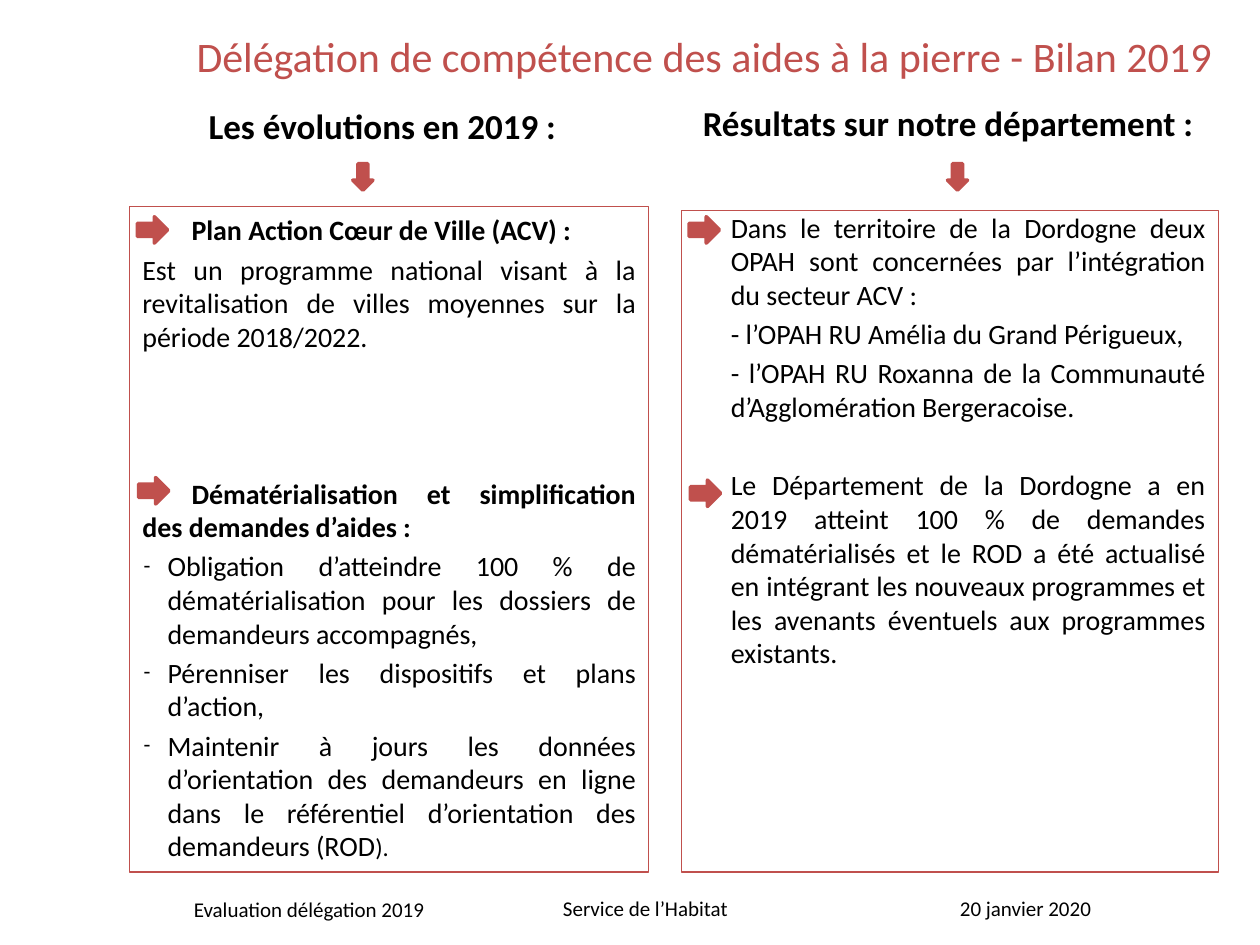
"""Build the 2019 review slide on the delegated housing-aid programme."""
from dataclasses import dataclass

from lxml import etree
from pptx import Presentation
from pptx import util as u
from pptx.dml.color import RGBColor
from pptx.enum import shapes, text
from pptx.oxml.ns import qn


@dataclass(frozen=True)
class Theme:
    face: str = "Calibri"
    red: RGBColor = RGBColor(0xC0, 0x50, 0x4D)
    ink: RGBColor = RGBColor(0, 0, 0)
    title: int = 24
    head: int = 20
    body: int = 16
    tail: int = 14
    foot: int = 12
    gap: float = 3.2


LOOK = Theme()
WIDE, HIGH = u.Inches(10), u.Inches(7.5)
ALIGN, ANCHOR = text.PP_ALIGN, text.MSO_ANCHOR

TITLE = "Délégation de compétence des aides à la pierre - Bilan 2019"
HEADS = ["Les évolutions en 2019 :", "Résultats sur notre département :"]

LEFT = [
    ("lead", "Plan Action Cœur de Ville (ACV) :", LOOK.gap),
    ("plain", "Est un programme national visant à la revitalisation de villes "
              "moyennes sur la période 2018/2022.", LOOK.gap),
    ("lead", "Dématérialisation et simplification des demandes d’aides :", 70.4),
    ("dash", "Obligation d’atteindre 100 % de dématérialisation pour les "
             "dossiers de demandeurs accompagnés,", LOOK.gap),
    ("dash", "Pérenniser les dispositifs et plans d’action,", LOOK.gap),
    ("dash", "Maintenir à jours les données d’orientation des demandeurs en "
             "ligne dans le référentiel d’orientation des demandeurs (ROD|).",
     LOOK.gap),
]
RIGHT = [
    ("inset", "Dans le territoire de la Dordogne deux OPAH sont concernées par "
              "l’intégration du secteur ACV :", LOOK.gap),
    ("inset", "- l’OPAH RU Amélia du Grand Périgueux,", LOOK.gap),
    ("inset", "- l’OPAH RU Roxanna de la Communauté d’Agglomération "
              "Bergeracoise.", LOOK.gap),
    ("inset", "Le Département de la Dordogne a en 2019 atteint 100 % de "
              "demandes dématérialisés et le ROD a été actualisé en intégrant "
              "les nouveaux programmes et les avenants éventuels aux programmes "
              "existants.", 25.6),
]
INDENT = {"lead": (0, 0.39), "plain": (0, 0), "dash": (0.2, -0.19),
          "inset": (0.29, 0)}

# Areas are left, top, width, height as percent of the slide.
AREAS = {
    "title": (14.6, 1.73, 82.7, 8.4),
    "heads": [(9.3, 10.4, 42.1, 6.67), (53.7, 8.93, 43.1, 8.13)],
    "boxes": [(10.3, 21.87, 41.2, 70.4), (54.1, 22.27, 42.6, 70)],
}
FEET = [
    ("Evaluation délégation 2019", (14.4, 94.27, 26, 4)),
    ("Service de l’Habitat", (43.7, 94.13, 28.4, 4)),
    ("20 janvier 2020", (75.2, 94.13, 15.8, 4)),
]
ARROWS = [
    (shapes.MSO_SHAPE.RIGHT_ARROW, (2.4, 2.8),
     [(10.9, 22.93), (54.7, 22.93), (11, 50.53), (54.8, 50.8)]),
    (shapes.MSO_SHAPE.DOWN_ARROW, (1.6, 2.8), [(75.2, 17.33), (28, 17.33)]),
]


def scale(area):
    return [int(part * side / 100) for part, side in zip(area, (WIDE, HIGH) * 2)]


def place(shape, area):
    shape.left, shape.top, shape.width, shape.height = scale(area)


def style(font, size, color=LOOK.ink, bold=False):
    font.name, font.size, font.bold = LOOK.face, u.Pt(size), bold
    font.color.rgb = color


def mark(para, kind):
    props = para._p.get_or_add_pPr()
    left, first = INDENT[kind]
    props.set("marL", str(u.Inches(left)))
    props.set("indent", str(u.Inches(first)))
    if kind == "dash":
        etree.SubElement(props, qn("a:buSzPct")).set("val", "80000")
        etree.SubElement(props, qn("a:buFont")).set("typeface", LOOK.face)
        etree.SubElement(props, qn("a:buChar")).set("char", "-")
    else:
        etree.SubElement(props, qn("a:buNone"))


def label(shape, words, size, align, anchor, color=LOOK.ink, bold=False):
    frame = shape.text_frame
    frame.word_wrap, frame.auto_size = True, text.MSO_AUTO_SIZE.NONE
    frame.vertical_anchor = anchor
    para = frame.paragraphs[0]
    para.text, para.alignment, para.space_before = words, align, u.Pt(0)
    style(para.font, size, color, bold)


def fill(shape, items):
    shape.line.color.rgb, shape.line.width = LOOK.red, u.Pt(0.75)
    frame = shape.text_frame
    frame.word_wrap, frame.auto_size = True, text.MSO_AUTO_SIZE.NONE
    frame.vertical_anchor = ANCHOR.TOP
    for rank, (kind, words, gap) in enumerate(items):
        para = frame.add_paragraph() if rank else frame.paragraphs[0]
        mark(para, kind)
        para.alignment = ALIGN.JUSTIFY
        para.space_before = u.Pt(gap if rank else 0)
        style(para.font, LOOK.body, bold=kind == "lead")
        main, _, tail = words.partition("|")
        para.add_run().text = main
        if tail:
            end = para.add_run()
            end.text, end.font.size = tail, u.Pt(LOOK.tail)


def main():
    deck = Presentation()
    deck.slide_width, deck.slide_height = WIDE, HIGH
    slide = deck.slides.add_slide(deck.slide_layouts.get_by_name("Comparison"))
    title, *slots = slide.placeholders

    place(title, AREAS["title"])
    label(title, TITLE, LOOK.title, ALIGN.LEFT, ANCHOR.MIDDLE, LOOK.red)
    for slot, words, area, anchor in zip(slots[::2], HEADS, AREAS["heads"],
                                         (ANCHOR.TOP, ANCHOR.MIDDLE)):
        place(slot, area)
        label(slot, words, LOOK.head, ALIGN.CENTER, anchor, bold=True)
    for slot, items, area in zip(slots[1::2], (LEFT, RIGHT), AREAS["boxes"]):
        place(slot, area)
        fill(slot, items)
    inner = slots[3].text_frame
    inner.margin_top = inner.margin_bottom = 0

    for words, area in FEET:
        box = slide.shapes.add_textbox(*scale(area))
        label(box, words, LOOK.foot, ALIGN.LEFT, ANCHOR.TOP)
    for form, size, spots in ARROWS:
        for spot in spots:
            arrow = slide.shapes.add_shape(form, *scale(spot + size))
            arrow.shadow.inherit = False
            arrow.fill.solid()
            arrow.fill.fore_color.rgb = arrow.line.color.rgb = LOOK.red
            arrow.line.width = u.Pt(2)

    deck.save("out.pptx")


if __name__ == "__main__":
    main()
